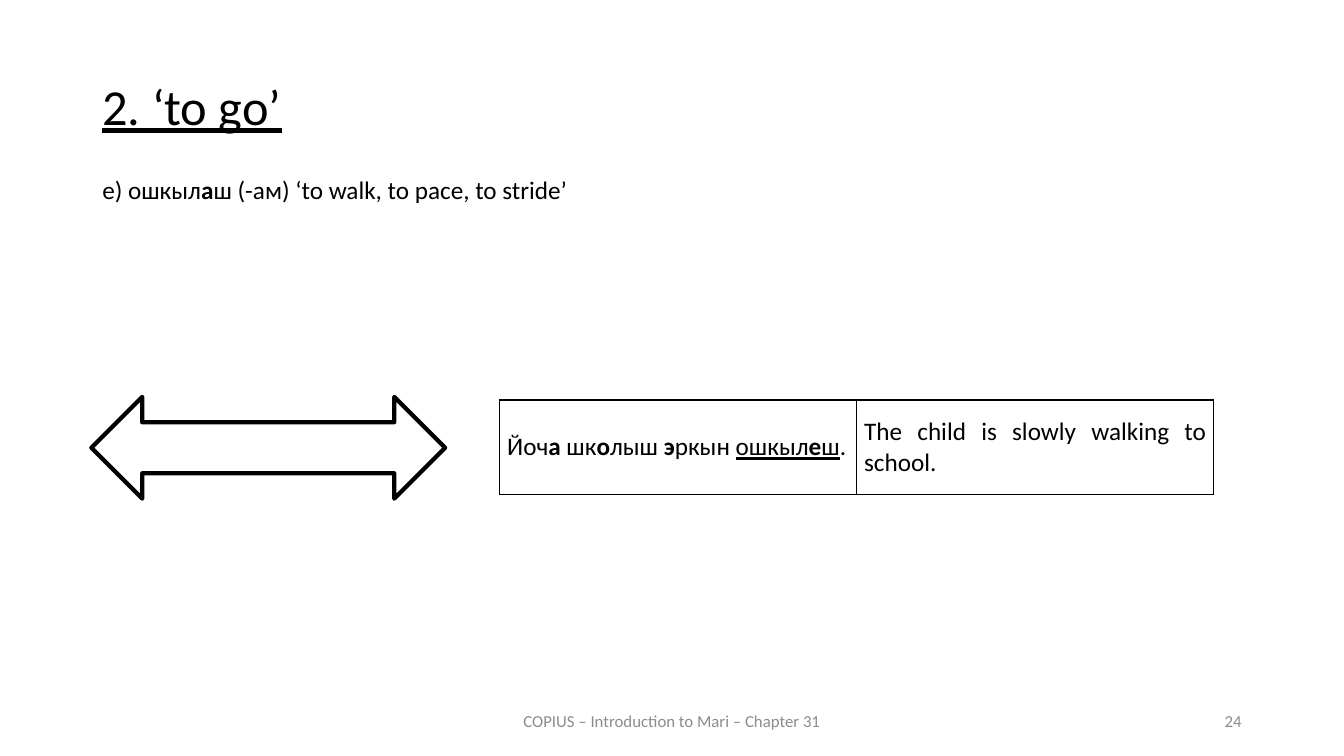
from dataclasses import dataclass

from lxml import etree
from pptx import Presentation
from pptx.dml.color import RGBColor
from pptx.enum.shapes import MSO_SHAPE
from pptx.enum.text import MSO_ANCHOR, PP_ALIGN
from pptx.oxml.ns import qn
from pptx.slide import Slide
from pptx.table import _Cell
from pptx.text.text import TextFrame
from pptx.util import Emu, Pt

LEFT, MID, RIGHT, JUST = PP_ALIGN.LEFT, PP_ALIGN.CENTER, PP_ALIGN.RIGHT, PP_ALIGN.JUSTIFY
TOP, CENTER = MSO_ANCHOR.TOP, MSO_ANCHOR.MIDDLE
ARROW = MSO_SHAPE.LEFT_RIGHT_ARROW


@dataclass(frozen=True)
class Theme:
    font: str = "Calibri"
    ink: str = "000000"
    gray: str = "8C8C8C"
    title: int = 36
    body: int = 18
    foot: int = 12
    rule: int = 1
    edge: int = 3


@dataclass(frozen=True)
class Box:
    x: int
    y: int
    w: int
    h: int


@dataclass(frozen=True)
class Span:
    text: str
    bold: bool = False
    under: bool = False


@dataclass(frozen=True)
class Label:
    box: Box
    spans: tuple[Span, ...]
    size: int
    color: str
    align: PP_ALIGN
    anchor: MSO_ANCHOR


THEME = Theme()
TITLE = Box(88, 73, 1104, 80)
SPREAD = Box(87, 378, 337, 97)
GRID = Box(476, 381, 680, 90)

LABELS = (
    Label(Box(88, 161, 496, 38),
          (Span("e) ошкыл"), Span("а", bold=True),
           Span("ш (-ам) ‘to walk, to pace, to stride’")),
          THEME.body, THEME.ink, LEFT, TOP),
    Label(Box(424, 667, 432, 38), (Span("COPIUS – Introduction to Mari – Chapter 31"),),
          THEME.foot, THEME.gray, MID, CENTER),
    Label(Box(904, 667, 288, 38), (Span("24"),),
          THEME.foot, THEME.gray, RIGHT, CENTER),
)

PAIR = (
    (Span("Йоч"), Span("а", bold=True), Span(" шк"), Span("о", bold=True),
     Span("лыш "), Span("э", bold=True), Span("ркын "),
     Span("ошкыл", under=True), Span("е", bold=True, under=True),
     Span("ш", under=True), Span(".")),
    (Span("The child is slowly walking to school."),),
)


def px(count: int) -> Emu:
    return Emu(count * 9525)


def place(box: Box) -> tuple[Emu, Emu, Emu, Emu]:
    return px(box.x), px(box.y), px(box.w), px(box.h)


def write(frame: TextFrame, spans: tuple[Span, ...], size: int, color: str,
          align: PP_ALIGN) -> None:
    para = frame.paragraphs[0]
    para.alignment = align
    for span in spans:
        run = para.add_run()
        run.text = span.text
        font = run.font
        font.name, font.size = THEME.font, Pt(size)
        font.bold, font.underline = span.bold, span.under
        font.color.rgb = RGBColor.from_string(color)


def add_title(slide: Slide) -> None:
    title = slide.shapes.title
    title.left, title.top, title.width, title.height = place(TITLE)
    frame = title.text_frame
    frame.vertical_anchor = TOP
    write(frame, (Span("2. ‘to go’", under=True),), THEME.title, THEME.ink, JUST)
    para = frame.paragraphs[0]
    para.line_spacing = 0.9
    para.space_before = Pt(0)


def add_label(slide: Slide, label: Label) -> None:
    frame = slide.shapes.add_textbox(*place(label.box)).text_frame
    frame.word_wrap = True
    frame.vertical_anchor = label.anchor
    write(frame, label.spans, label.size, label.color, label.align)


def add_arrow(slide: Slide) -> None:
    arrow = slide.shapes.add_shape(ARROW, *place(SPREAD))
    arrow.shadow.inherit = False
    arrow.fill.background()
    arrow.line.color.rgb = RGBColor.from_string(THEME.ink)
    arrow.line.width = Pt(THEME.edge)


def frame_cell(cell: _Cell) -> None:
    """Draw all four borders and leave the cell unfilled."""
    props = cell._tc.get_or_add_tcPr()
    for side in ("a:lnL", "a:lnR", "a:lnT", "a:lnB"):
        line = etree.SubElement(props, qn(side), w=str(Pt(THEME.rule)))
        fill = etree.SubElement(line, qn("a:solidFill"))
        etree.SubElement(fill, qn("a:srgbClr"), val=THEME.ink)
    cell.fill.background()


def add_pair(slide: Slide) -> None:
    table = slide.shapes.add_table(1, len(PAIR), *place(GRID)).table
    table.first_row = table.horz_banding = False
    for cell, spans in zip(table.rows[0].cells, PAIR):
        cell.margin_left = cell.margin_right = px(7)
        cell.margin_top = cell.margin_bottom = 0
        cell.vertical_anchor = CENTER
        frame_cell(cell)
        write(cell.text_frame, spans, THEME.body, THEME.ink, JUST)


def main() -> None:
    deck = Presentation()
    deck.slide_width, deck.slide_height = px(1280), px(720)
    slide = deck.slides.add_slide(deck.slide_layouts[5])
    add_title(slide)
    for label in LABELS:
        add_label(slide, label)
    add_pair(slide)
    add_arrow(slide)
    deck.save("out.pptx")


if __name__ == "__main__":
    main()
